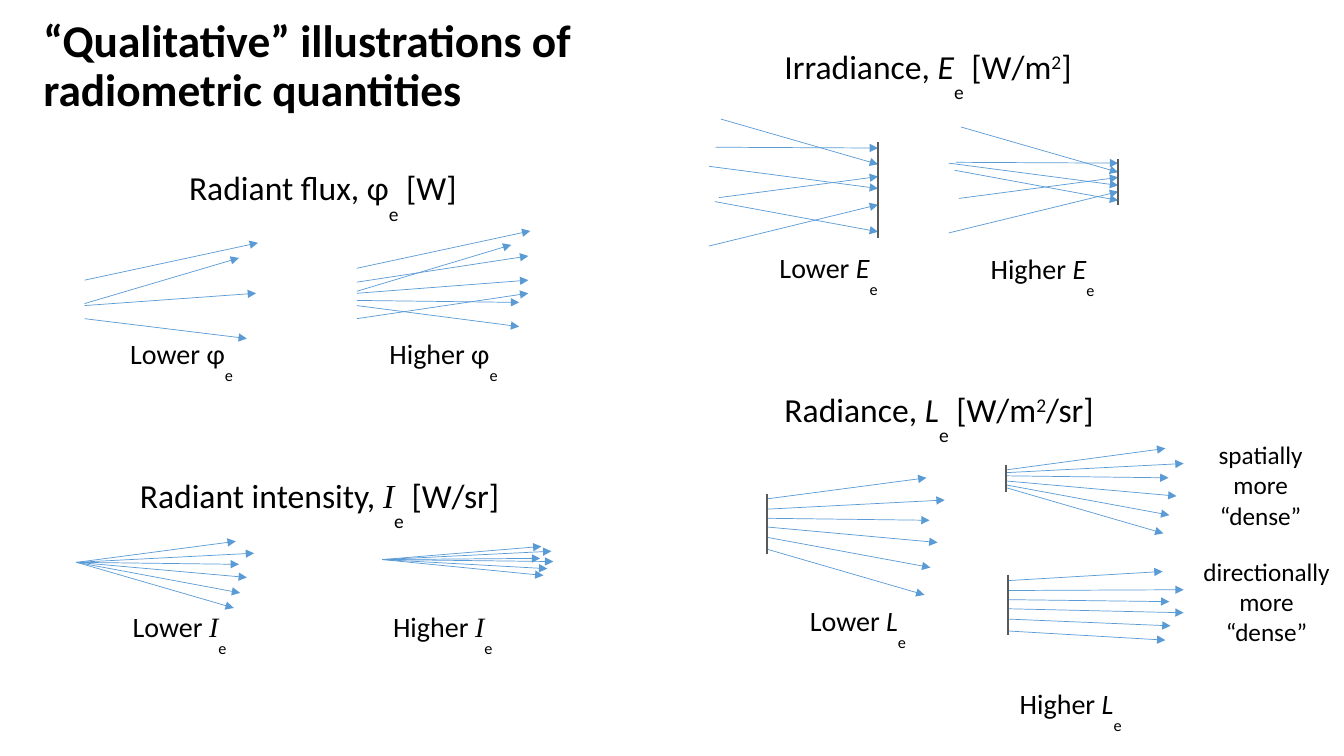
from lxml.etree import SubElement
from pptx import Presentation
from pptx.dml.color import RGBColor
from pptx.enum.shapes import MSO_CONNECTOR
from pptx.enum.text import MSO_ANCHOR, MSO_AUTO_SIZE, PP_ALIGN
from pptx.oxml.ns import qn
from pptx.util import Cm, Pt

COLORS = {"text": "000000", "ray": "5B9BD5", "plate": "595959"}
FONT, SERIF = "Calibri", "Times New Roman"

# Ray patterns, top to bottom: (dx, dy) from the foot of each ray
WIDE_FAN = [(1.58, -0.21), (1.76, -0.09), (1.61, 0.02),
            (1.69, 0.15), (1.62, 0.3), (1.56, 0.45)]
NARROW_FAN = [(1.58, -0.13), (1.68, -0.08), (1.57, -0.01),
              (1.7, 0.02), (1.64, 0.09), (1.6, 0.16)]
PARALLEL_FAN = [(1.53, -0.09), (1.74, -0.01), (1.6, 0.02),
                (1.74, 0.04), (1.61, 0.07), (1.56, 0.09)]
SPARSE_FLUX = [(1.72, -0.37), (1.53, -0.45), (1.7, -0.12), (1.61, 0.2)]
DENSE_FLUX = [(1.72, -0.37), (1.7, -0.26), (1.53, -0.46), (1.7, -0.13),
              (1.61, 0.02), (1.61, 0.21), (1.7, -0.25)]
INCOMING = [(-1.61, -0.01), (-1.56, -0.45), (-1.58, 0.21),
            (-1.68, -0.22), (-1.68, 0.41), (-1.62, -0.3)]

# Vertical offsets of the feet of the rays
POINT = [0] * 6
SPREAD = [0, 0.1, 0.19, 0.28, 0.38, 0.5]
CLOSE = [0, 0.03, 0.06, 0.11, 0.15, 0.18]


def length(inches):
    return Cm(round(inches * 2.54, 2))


def add_run(paragraph, text, size=20, font=FONT, bold=False, italic=False, baseline=0):
    run = paragraph.add_run()
    run.text = text
    run.font.size = Pt(size)
    run.font.name = font
    run.font.bold = bold
    run.font.italic = italic
    run.font.color.rgb = RGBColor.from_string(COLORS["text"])
    if baseline:
        run.font._element.set("baseline", str(baseline * 1000))


class RadiometrySlide:
    def __init__(self, presentation):
        self.slide = presentation.slides.add_slide(presentation.slide_layouts[5])

    def title(self, text, left, top, width, height):
        shape = self.slide.shapes.title
        shape.left, shape.top = length(left), length(top)
        shape.width, shape.height = length(width), length(height)
        frame = shape.text_frame
        frame.auto_size = MSO_AUTO_SIZE.NONE
        frame.vertical_anchor = MSO_ANCHOR.MIDDLE
        paragraph = frame.paragraphs[0]
        paragraph.alignment = PP_ALIGN.LEFT
        paragraph.line_spacing = 0.9
        add_run(paragraph, text, size=32.4, bold=True)

    def text(self, runs, left, top, width, height, size=20, wrap=True):
        box = self.slide.shapes.add_textbox(
            length(left), length(top), length(width), length(height))
        frame = box.text_frame
        frame.word_wrap = wrap
        frame.auto_size = MSO_AUTO_SIZE.SHAPE_TO_FIT_TEXT
        paragraph = frame.paragraphs[0]
        paragraph.alignment = PP_ALIGN.CENTER
        for text, style in runs:
            add_run(paragraph, text, size=size, **style)

    def heading(self, name, symbol, unit, left, top, width):
        runs = [(name + ", ", {}), *symbol, (" [W", {})]
        before, power, after = unit.partition("²")
        runs[-1] = (" [" + before, {})
        if power:
            runs.append(("2", {"baseline": 30}))
        runs.append((after + "]", {}))
        self.text(runs, left, top, width, 0.5, size=24, wrap=False)

    def caption(self, level, symbol, left, top):
        self.text([(level + " ", {}), *symbol], left, top, 1.72, 0.44)

    def line(self, start, end, color, width, arrow=False):
        points = [length(value) for value in (*start, *end)]
        connector = self.slide.shapes.add_connector(MSO_CONNECTOR.STRAIGHT, *points)
        connector.line.color.rgb = RGBColor.from_string(COLORS[color])
        connector.line.width = Pt(width)
        if arrow:
            SubElement(connector.line._get_or_add_ln(), qn("a:tailEnd"), type="triangle")
        SubElement(connector._element.spPr, qn("a:effectLst"))

    def rays(self, x, y, offsets, directions, arriving=False):
        for offset, (dx, dy) in zip(offsets, directions):
            foot = (x, y + offset)
            far = (x + dx, y + offset + dy)
            start, end = (far, foot) if arriving else (foot, far)
            self.line(start, end, "ray", 0.5, arrow=True)

    def plate(self, x, top, bottom):
        self.line((x, top), (x, bottom), "plate", 1.5)


def quantity(letter, **style):
    return [(letter, style), ("e", {"baseline": -60})]


def main():
    presentation = Presentation()
    presentation.slide_width, presentation.slide_height = length(13.33), length(7.5)
    page = RadiometrySlide(presentation)
    page.title("“Qualitative” illustrations of radiometric quantities", 0.33, 0.2, 6, 0.94)

    # Radiant flux
    flux = quantity("φ")
    page.heading("Radiant flux", flux, "W", 1.75, 1.61, 2.9)
    page.rays(0.84, 2.78, [0, 0.23, 0.25, 0.38], SPARSE_FLUX)
    page.caption("Lower", flux, 0.94, 3.29)
    page.rays(3.54, 2.66, [0, 0.14, 0.23, 0.25, 0.32, 0.37, 0.5], DENSE_FLUX)
    page.caption("Higher", flux, 3.54, 3.29)

    # Radiant intensity
    intensity = quantity("I", font=SERIF, italic=True)
    page.heading("Radiant intensity", intensity, "W/sr", 1.26, 4.66, 3.82)
    page.rays(0.76, 5.58, POINT, WIDE_FAN)
    page.caption("Lower", intensity, 0.92, 6)
    page.rays(3.79, 5.55, POINT, NARROW_FAN)
    page.caption("Higher", intensity, 3.53, 6)

    # Irradiance
    irradiance = quantity("E", italic=True)
    page.heading("Irradiance", irradiance, "W/m²", 7.65, 0.41, 3.11)
    page.rays(8.71, 1.47, [0, 0.16, 0.28, 0.4, 0.56, 0.83], INCOMING, arriving=True)
    page.plate(8.71, 1.41, 2.36)
    page.caption("Lower", irradiance, 7.36, 2.44)
    page.rays(11.09, 1.62, [0, 0.09, 0.14, 0.22, 0.28, 0.37], INCOMING, arriving=True)
    page.plate(11.09, 1.58, 2.03)
    page.caption("Higher", irradiance, 9.48, 2.45)

    # Radiance
    radiance = quantity("L", italic=True)
    page.heading("Radiance", radiance, "W/m²/sr", 7.65, 3.81, 3.33)
    page.rays(7.61, 4.95, SPREAD, WIDE_FAN)
    page.plate(7.61, 4.9, 5.5)
    page.caption("Lower", radiance, 7.65, 5.94)
    page.rays(9.98, 4.66, CLOSE, WIDE_FAN)
    page.plate(9.98, 4.61, 4.88)
    page.text([("spatially more “dense”", {})], 11.84, 4.31, 1.33, 1.01, size=18)
    page.rays(10, 5.76, SPREAD, PARALLEL_FAN)
    page.plate(10, 5.7, 6.3)
    page.text([("directionally more “dense”", {})], 11.82, 5.47, 1.49, 1.01, size=18)
    page.caption("Higher", radiance, 9.76, 6.76)

    presentation.save("out.pptx")


if __name__ == "__main__":
    main()
